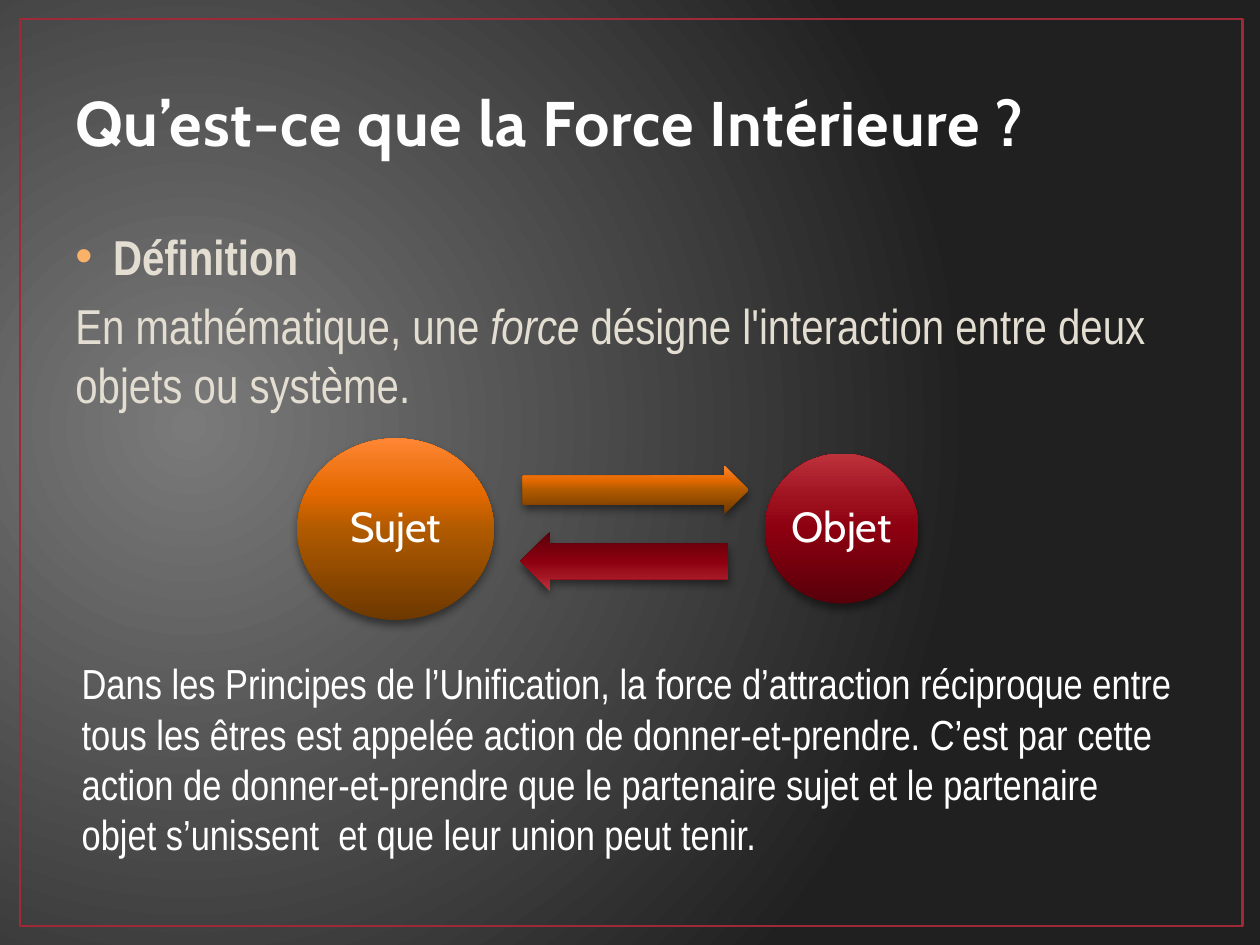
from pptx import Presentation
from pptx.dml.color import RGBColor
from pptx.enum.shapes import MSO_SHAPE
from pptx.enum.text import MSO_ANCHOR, MSO_AUTO_SIZE, PP_ALIGN
from pptx.oxml import parse_xml
from pptx.oxml.ns import nsdecls, qn
from pptx.util import Inches, Pt

HEADING, BODY = "Cabin", "Arial Narrow"
WHITE, CREAM, FRAME, BULLET = "FFFFFF", "E3DED1", "9F2936", "F9B268"
ORANGE = [(0, "6D3800"), (50, "B05A00"), (70, "E46900"), (100, "FF8634")]
RED = [(0, "58000A"), (50, "8D0010"), (70, "9E111F"), (100, "BE323C")]
LINEAR = '<a:lin ang="16200000" scaled="0"/>'
RADIAL = ('<a:path path="circle"><a:fillToRect l="15000" t="50000" '
          'r="85000" b="60000"/></a:path>')


def rgb(value):
    return RGBColor.from_string(value)


def set_gradient(fill, root, stops, direction):
    fill.gradient()
    old = root.find(".//" + qn("a:gradFill"))
    gs = "".join(f'<a:gs pos="{pos * 1000}"><a:srgbClr val="{c}"/></a:gs>'
                 for pos, c in stops)
    new = parse_xml(f'<a:gradFill {nsdecls("a")} rotWithShape="1">'
                    f'<a:gsLst>{gs}</a:gsLst>{direction}</a:gradFill>')
    old.getparent().replace(old, new)


def add_run(p, text, size, font, color, bold=False, italic=False):
    r = p.add_run()
    r.text = text
    r.font.size, r.font.name = Pt(size), font
    r.font.bold, r.font.italic = bold, italic
    r.font.color.rgb = rgb(color)
    return r


def add_text_box(s, box):
    tf = s.shapes.add_textbox(*map(Inches, box)).text_frame
    tf.word_wrap = True
    return tf


def add_glossy(s, kind, box, stops):
    sp = s.shapes.add_shape(kind, *map(Inches, box))
    sp.line.fill.background()
    spPr = sp._element.spPr
    set_gradient(sp.fill, spPr, stops, LINEAR)
    spPr.append(parse_xml(
        f'<a:effectLst {nsdecls("a")}><a:outerShdw blurRad="{Pt(5)}" '
        f'dist="{Pt(3)}" dir="5400000" rotWithShape="0"><a:srgbClr val="000000">'
        '<a:alpha val="45000"/></a:srgbClr></a:outerShdw></a:effectLst>'))
    return sp


def add_backdrop(s, box):
    set_gradient(s.background.fill, s._element,
                 [(0, "7A7A7A"), (100, "202020")], RADIAL)
    sp = s.shapes.add_shape(MSO_SHAPE.RECTANGLE, *map(Inches, box))
    sp.fill.background()
    sp.shadow.inherit = False
    sp.line.color.rgb, sp.line.width = rgb(FRAME), Pt(1.5)


def add_title(s, box):
    sp = s.shapes.title
    sp.left, sp.top, sp.width, sp.height = map(Inches, box)
    tf = sp.text_frame
    tf.auto_size = MSO_AUTO_SIZE.NONE
    tf.vertical_anchor = MSO_ANCHOR.BOTTOM
    p = tf.paragraphs[0]
    p.alignment = PP_ALIGN.LEFT
    r = add_run(p, "Qu’est-ce que la Force Intérieure ?", 36, HEADING, "FEFEFE", True)
    r.font._element.set("spc", "50")


def add_definition(s, box):
    tf = add_text_box(s, box)
    p = tf.paragraphs[0]
    p.space_before = Pt(5.6)
    add_run(p, "Définition", 28, BODY, CREAM, bold=True)
    pPr = p._p.get_or_add_pPr()
    pPr.set("marL", str(Inches(0.3)))
    pPr.set("indent", str(Inches(-0.3)))
    for xml in (f'<a:buClr {nsdecls("a")}><a:srgbClr val="{BULLET}"/></a:buClr>',
                f'<a:buFont {nsdecls("a")} typeface="Arial"/>',
                f'<a:buChar {nsdecls("a")} char="•"/>'):
        pPr.append(parse_xml(xml))
    p = tf.add_paragraph()
    p.space_before = Pt(5.6)
    for text, italic in (("En mathématique, une ", False), ("force ", True),
                         ("désigne l'interaction entre deux objets ou système.", False)):
        add_run(p, text, 28, BODY, CREAM, italic=italic)


def add_exchange(s, x, y):
    """Subject and object joined by a pair of opposite arrows."""
    # Arrows
    for dx, dy, w, h, stops, turn in ((1.79, 0.22, 1.79, 0.38, ORANGE, 359.9),
                                      (1.77, 0.74, 1.65, 0.47, RED, 180)):
        sp = add_glossy(s, MSO_SHAPE.RIGHT_ARROW, (x + dx, y + dy, w, h), stops)
        sp.adjustments[0], sp.adjustments[1] = 0.6, 0.5
        sp.rotation = turn
    # Partners
    for label, dx, dy, w, h, stops in (("Sujet", 0, 0, 1.56, 1.44, ORANGE),
                                       ("Objet", 3.71, 0.12, 1.22, 1.19, RED)):
        sp = add_glossy(s, MSO_SHAPE.OVAL, (x + dx, y + dy, w, h), stops)
        tf = sp.text_frame
        tf.margin_left = tf.margin_right = tf.margin_top = tf.margin_bottom = Inches(0.03)
        tf.vertical_anchor = MSO_ANCHOR.MIDDLE
        p = tf.paragraphs[0]
        p.alignment, p.line_spacing = PP_ALIGN.CENTER, 0.9
        add_run(p, label, 24, HEADING, WHITE)


def add_explanation(s, box):
    tf = add_text_box(s, box)
    add_run(tf.paragraphs[0],
            "Dans les Principes de l’Unification, la force d’attraction réciproque "
            "entre tous les êtres est appelée action de donner-et-prendre. C’est par "
            "cette action de donner-et-prendre que le partenaire sujet et le partenaire "
            "objet s’unissent  et que leur union peut tenir.", 24, BODY, WHITE)


def main():
    prs = Presentation()
    prs.slide_width, prs.slide_height = Inches(10), Inches(7.5)
    s = prs.slides.add_slide(prs.slide_layouts[5])
    add_backdrop(s, (0.16, 0.15, 9.7, 7.2))
    add_title(s, (0.5, 0.3, 9, 1.01))
    add_definition(s, (0.5, 1.75, 8.83, 1.84))
    add_exchange(s, 2.36, 3.48)
    add_explanation(s, (0.55, 5.17, 8.86, 1.72))
    prs.save("out.pptx")


if __name__ == "__main__":
    main()
